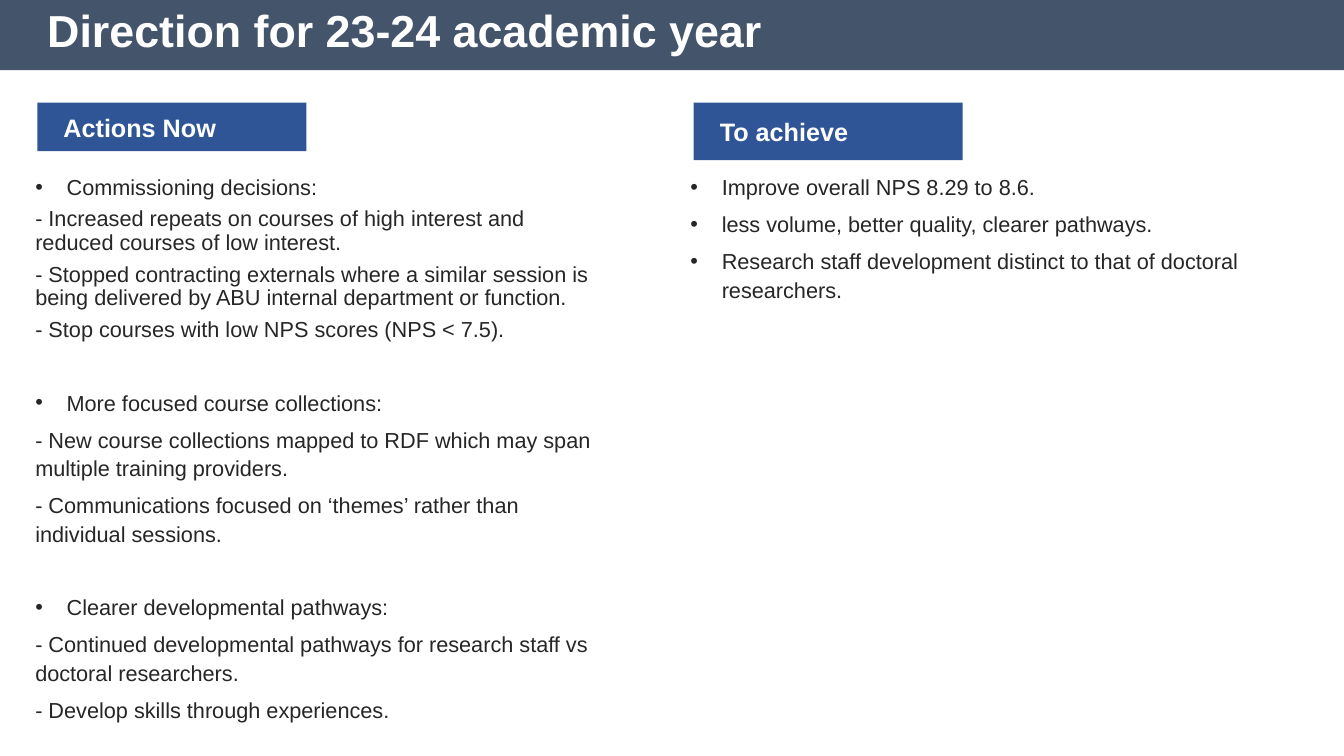
from lxml import etree
from pptx import Presentation
from pptx.dml.color import RGBColor
from pptx.enum.shapes import MSO_SHAPE
from pptx.enum.text import MSO_ANCHOR, MSO_AUTO_SIZE, PP_ALIGN
from pptx.oxml.ns import qn
from pptx.util import Cm, Pt

RECTANGLE = MSO_SHAPE.RECTANGLE
MIDDLE = MSO_ANCHOR.MIDDLE
GROW = MSO_AUTO_SIZE.SHAPE_TO_FIT_TEXT
LEFT = PP_ALIGN.LEFT

SLATE = RGBColor(0x44, 0x54, 0x6A)
BLUE = RGBColor(0x2F, 0x55, 0x97)
WHITE = RGBColor(0xFF, 0xFF, 0xFF)
CHARCOAL = RGBColor(0x26, 0x26, 0x26)

TITLE_FONT = {"name": "Arial", "size": Pt(32), "bold": True}
LABEL_FONT = {"name": "Arial", "size": Pt(18), "bold": True}
BODY_FONT = {"name": "Arial", "size": Pt(15.5)}
LABEL_FRAME = {"vertical_anchor": MIDDLE, "margin_left": Cm(0.66), "word_wrap": True}
TITLE_FRAME = {"vertical_anchor": MIDDLE, "word_wrap": True}
LIST_FRAME = {"auto_size": GROW, "word_wrap": True}

TIGHT, LOOSE = 0.9, 1.1
ITEM_GAP, SECTION_GAP = Pt(6), Pt(32)
HANGING = Cm(0.79)

ACTIONS = [
    ("Commissioning decisions:", TIGHT, [
        "- Increased repeats on courses of high interest and reduced courses of low interest.",
        "- Stopped contracting externals where a similar session is being delivered by "
        "ABU internal department or function.",
        "- Stop courses with low NPS scores (NPS < 7.5).",
    ]),
    ("More focused course collections:", LOOSE, [
        "- New course collections mapped to RDF which may span multiple training providers.",
        "- Communications focused on ‘themes’ rather than individual sessions.",
    ]),
    ("Clearer developmental pathways:", LOOSE, [
        "- Continued developmental pathways for research staff vs doctoral researchers.",
        "- Develop skills through experiences.",
    ]),
]
GOALS = [
    "Improve overall NPS 8.29 to 8.6.",
    "less volume, better quality, clearer pathways.",
    "Research staff development distinct to that of doctoral researchers.",
]


def apply_format(target, values):
    """Set every attribute named in the dict."""
    for name, value in values.items():
        setattr(target, name, value)


def write(paragraph, text, font, color, spacing):
    """Fill a paragraph with formatted text."""
    run = paragraph.add_run()
    run.text = text
    apply_format(run.font, font)
    run.font.color.rgb = color
    apply_format(paragraph, {"alignment": LEFT, "line_spacing": spacing})


def add_bullet(paragraph):
    """Give a paragraph a hanging round bullet."""
    properties = paragraph._p.get_or_add_pPr()
    properties.set("marL", str(HANGING))
    properties.set("indent", str(-HANGING))
    etree.SubElement(properties, qn("a:buFont")).set("typeface", "Arial")
    etree.SubElement(properties, qn("a:buChar")).set("char", "•")


def add_block(slide, box, color):
    """Draw a flat filled rectangle."""
    block = slide.shapes.add_shape(RECTANGLE, *map(Cm, box))
    block.shadow.inherit = False
    block.fill.solid()
    block.fill.fore_color.rgb = color
    block.line.fill.background()
    return block


def add_label(slide, box, text):
    """Draw a blue column heading."""
    frame = add_block(slide, box, BLUE).text_frame
    apply_format(frame, LABEL_FRAME)
    write(frame.paragraphs[0], text, LABEL_FONT, WHITE, 1.0)


def add_title(slide, box, text):
    """Place the slide heading."""
    frame = slide.shapes.add_textbox(*map(Cm, box)).text_frame
    apply_format(frame, TITLE_FRAME)
    write(frame.paragraphs[0], text, TITLE_FONT, WHITE, TIGHT)


def add_list(slide, box, items):
    """Place items given as text, line spacing, gap before and bullet flag."""
    frame = slide.shapes.add_textbox(*map(Cm, box)).text_frame
    apply_format(frame, LIST_FRAME)
    for index, (text, spacing, gap, bulleted) in enumerate(items):
        paragraph = frame.add_paragraph() if index else frame.paragraphs[0]
        write(paragraph, text, BODY_FONT, CHARCOAL, spacing)
        paragraph.space_before = gap
        if bulleted:
            add_bullet(paragraph)


def action_items():
    """List the action headings with their details."""
    items = []
    for heading, spacing, details in ACTIONS:
        items.append((heading, LOOSE, SECTION_GAP if items else ITEM_GAP, True))
        items += [(detail, spacing, ITEM_GAP, False) for detail in details]
    return items


def main():
    """Build and save the slide."""
    deck = Presentation()
    apply_format(deck, {"slide_width": Cm(33.87), "slide_height": Cm(19.05)})
    slide = deck.slides.add_slide(deck.slide_layouts[6])
    add_block(slide, (-0.03, -0.13, 33.93, 1.9), SLATE)
    add_title(slide, (0.94, 0, 29.29, 1.68), "Direction for 23-24 academic year")
    goals = [(goal, LOOSE, ITEM_GAP, True) for goal in GOALS]
    add_list(slide, (17.15, 4.19, 16.31, 3.53), goals)
    add_label(slide, (17.48, 2.59, 6.78, 1.45), "To achieve")
    add_label(slide, (0.94, 2.59, 6.78, 1.22), "Actions Now")
    add_list(slide, (0.64, 4.19, 14.76, 17.09), action_items())
    deck.save("out.pptx")


if __name__ == "__main__":
    main()
